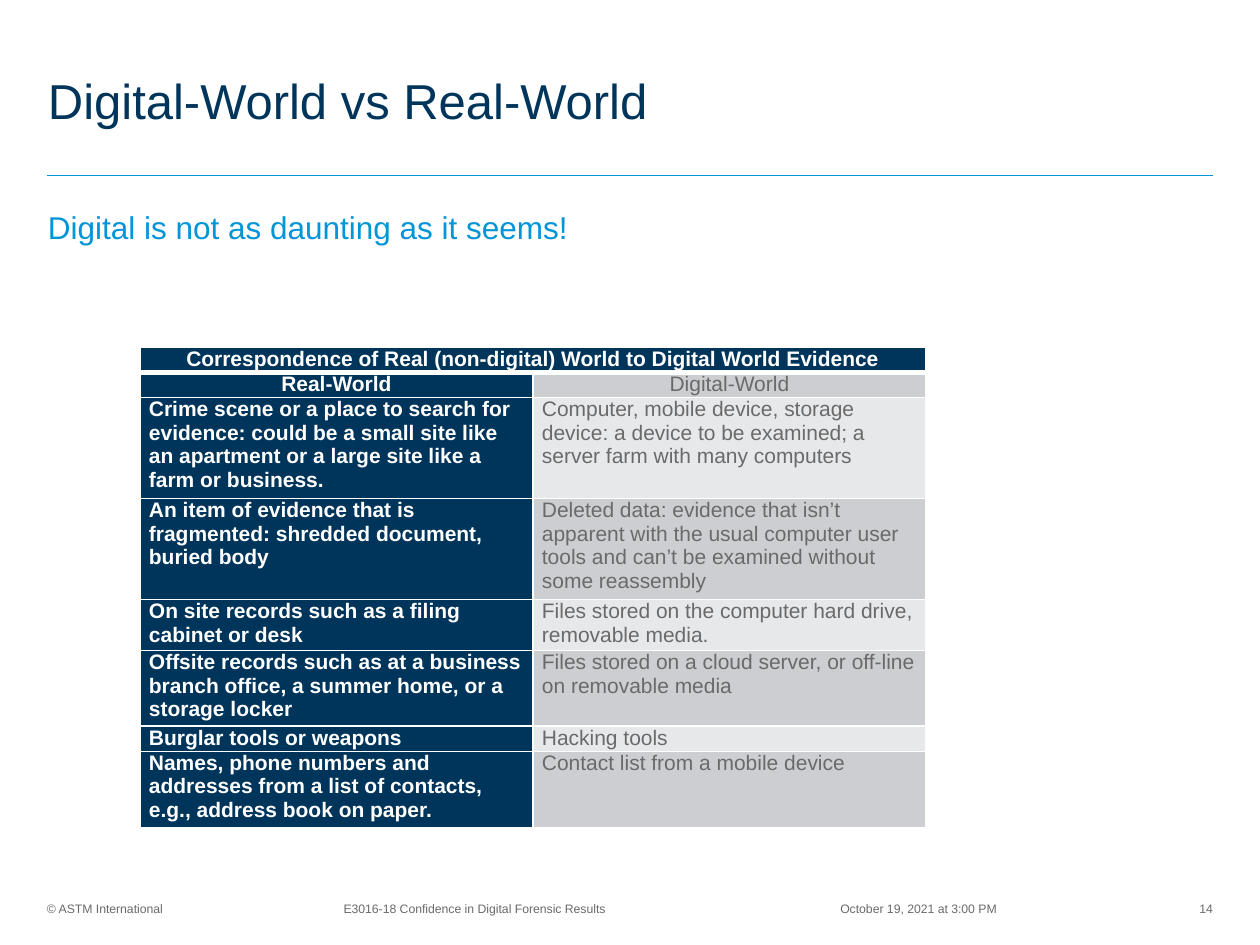
from dataclasses import dataclass

from lxml import etree
from pptx import Presentation
from pptx.dml.color import RGBColor
from pptx.enum.shapes import MSO_CONNECTOR
from pptx.enum.text import MSO_ANCHOR, PP_ALIGN
from pptx.oxml.ns import qn
from pptx.util import Emu, Pt

LEFT, CENTER, RIGHT = PP_ALIGN.LEFT, PP_ALIGN.CENTER, PP_ALIGN.RIGHT
TOP, MIDDLE = MSO_ANCHOR.TOP, MSO_ANCHOR.MIDDLE
STRAIGHT = MSO_CONNECTOR.STRAIGHT
PX_PER_INCH = 126
BLANK_LAYOUT = 6


@dataclass(frozen=True)
class Theme:
    """Colours, font and type sizes of the slide."""
    font: str = "Arial"
    navy: str = "00355B"
    blue: str = "0095D6"
    grey: str = "6A6A6A"
    white: str = "FFFFFF"
    band_dark: str = "CCCED2"
    band_light: str = "E7E8EA"
    title_size: int = 28
    subtitle_size: int = 18
    table_size: int = 12
    footer_size: int = 7


THEME = Theme()

TABLE_TITLE = "Correspondence of Real (non-digital) World to Digital World Evidence"
TABLE_ROWS = [
    (25, "Real-World", "Digital-World"),
    (101, "Crime scene or a place to search for evidence: could be a small site "
          "like an apartment or a large site like a farm or business.",
     "Computer, mobile device, storage device: a device to be examined; "
     "a server farm with many computers"),
    (101, "An item of evidence that is fragmented: shredded document, buried body",
     "Deleted data: evidence that isn’t apparent with the usual computer user "
     "tools and can’t be examined without some reassembly"),
    (51, "On site records such as a filing cabinet or desk",
     "Files stored on the computer hard drive, removable media."),
    (75, "Offsite records such as at a business branch office, a summer home, "
         "or a storage locker",
     "Files stored on a cloud server, or off-line on removable media"),
    (25, "Burglar tools or weapons", "Hacking tools"),
    (76, "Names, phone numbers and addresses from a list of contacts, "
         "e.g., address book on paper.",
     "Contact list from a mobile device"),
]
TABLE_TITLE_HEIGHT = 25


def px(length):
    """Turn pixels into EMU."""
    return Emu(round(length * 914400 / PX_PER_INCH))


def set_attributes(target, values):
    """Set every attribute named in a dict of format values."""
    for name, value in values.items():
        setattr(target, name, value)


def write(frame, text, size, color, align=LEFT, bold=False, spacing=None):
    """Write one formatted paragraph into a text frame."""
    paragraph = frame.paragraphs[0]
    set_attributes(paragraph, {"alignment": align, "line_spacing": spacing})
    run = paragraph.add_run()
    run.text = text
    set_attributes(run.font, {"name": THEME.font, "size": Pt(size), "bold": bold})
    run.font.color.rgb = RGBColor.from_string(color)


def add_text(slide, box, text, size, color, anchor=TOP, **paragraph_format):
    """Add a text box without margins."""
    frame = slide.shapes.add_textbox(*map(px, box)).text_frame
    set_attributes(frame, {
        "word_wrap": True, "vertical_anchor": anchor, "margin_left": 0,
        "margin_top": 0, "margin_right": 0, "margin_bottom": 0})
    write(frame, text, size, color, **paragraph_format)


def add_heading(slide, box):
    """Place the title, the rule under it and the subtitle."""
    left, top, width, _ = box
    add_text(slide, (left, top, 971, 118), "Digital-World vs Real-World",
             THEME.title_size, THEME.navy, MIDDLE, spacing=Pt(30))
    rule_top = px(top + 131)
    rule = slide.shapes.add_connector(
        STRAIGHT, px(left - 1), rule_top, px(left + width), rule_top)
    rule.line.color.rgb = RGBColor.from_string(THEME.blue)
    rule.line.width = Pt(0.5)
    etree.SubElement(rule.element.spPr, qn("a:effectLst"))
    add_text(slide, (left, top + 164, 556, 42),
             "Digital is not as daunting as it seems!",
             THEME.subtitle_size, THEME.blue)


def set_borders(cell, widths):
    """Draw white cell borders from a dict of side tags and point widths."""
    properties = cell._tc.get_or_add_tcPr()
    for side, width in widths.items():
        line = etree.SubElement(properties, qn(f"a:{side}"), w=str(Pt(width)))
        fill = etree.SubElement(line, qn("a:solidFill"))
        etree.SubElement(fill, qn("a:srgbClr"), val=THEME.white)


def format_cell(cell, fill, top_border=1, bottom_border=1):
    """Set the margins, borders and fill of a table cell."""
    set_attributes(cell, {
        "margin_left": px(9), "margin_right": px(9),
        "margin_top": 0, "margin_bottom": 0, "vertical_anchor": TOP})
    set_borders(cell, {"lnL": 1, "lnR": 1, "lnT": top_border, "lnB": bottom_border})
    cell.fill.solid()
    cell.fill.fore_color.rgb = RGBColor.from_string(fill)


def add_evidence_table(slide, box):
    """Place the table that pairs real-world with digital evidence."""
    table = slide.shapes.add_table(len(TABLE_ROWS) + 1, 2, *map(px, box)).table
    set_attributes(table, {"first_row": False, "horz_banding": False})
    for column in table.columns:
        column.width = px(box[2] / 2)
    table.rows[0].height = px(TABLE_TITLE_HEIGHT)
    for cell in table.rows[0].cells:
        format_cell(cell, THEME.navy, bottom_border=3)
    table.cell(0, 0).merge(table.cell(0, 1))
    write(table.cell(0, 0).text_frame, TABLE_TITLE, THEME.table_size,
          THEME.white, CENTER, True)
    for index, (height, real, digital) in enumerate(TABLE_ROWS, 1):
        table.rows[index].height = px(height)
        band = THEME.band_dark if index % 2 else THEME.band_light
        align = CENTER if index == 1 else LEFT
        columns = [(real, THEME.navy, THEME.white, True),
                   (digital, band, THEME.grey, False)]
        for cell, (text, fill, color, bold) in zip(table.rows[index].cells, columns):
            format_cell(cell, fill, top_border=3 if index == 1 else 1)
            write(cell.text_frame, text, THEME.table_size, color, align, bold)


def add_footer(slide, box):
    """Place the copyright, document name, date and slide number."""
    left, top, width, height = box
    parts = [
        ("© ASTM International", 0, 142, LEFT, TOP),
        ("E3016-18 Confidence in Digital Forensic Results", 211, 433, CENTER, MIDDLE),
        ("October 19, 2021 at 3:00 PM", 676, 391, CENTER, MIDDLE),
        ("14", width - 62, 62, RIGHT, MIDDLE),
    ]
    for text, offset, part_width, align, anchor in parts:
        add_text(slide, (left + offset, top, part_width, height), text,
                 THEME.footer_size, THEME.grey, anchor, align=align)


def main():
    """Build the slide and save it."""
    presentation = Presentation()
    set_attributes(presentation, {"slide_width": px(1260), "slide_height": px(945)})
    slide = presentation.slides.add_slide(presentation.slide_layouts[BLANK_LAYOUT])
    add_heading(slide, (48, 44, 1165, 206))
    add_evidence_table(slide, (140, 347, 786, 479))
    add_footer(slide, (47, 901, 1166, 16))
    presentation.save("out.pptx")


if __name__ == "__main__":
    main()
